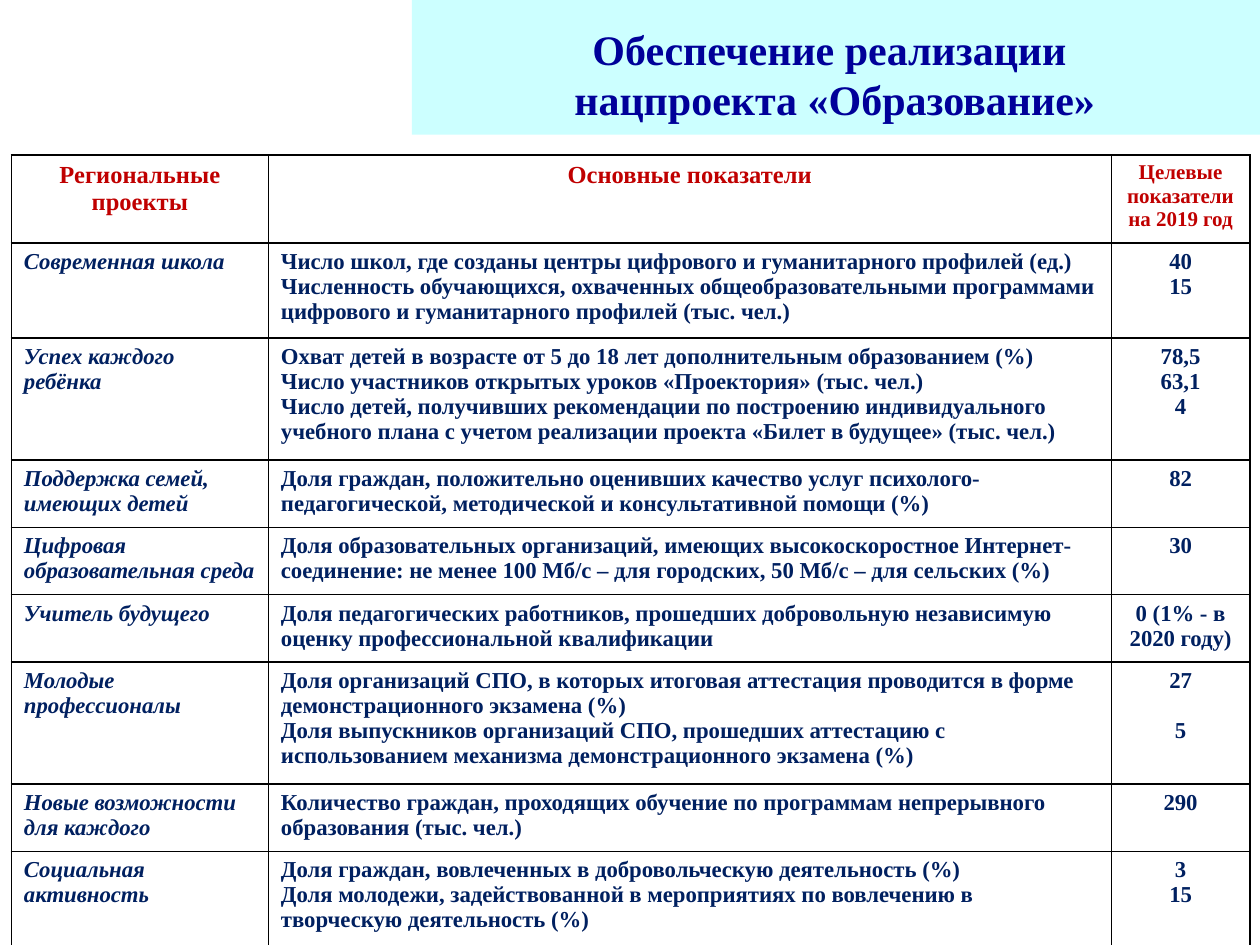
from dataclasses import dataclass

from pptx import Presentation
from pptx import util as u
from pptx.dml.color import RGBColor
from pptx.enum import shapes, text
from pptx.oxml.ns import qn
from lxml import etree


@dataclass(frozen=True)
class Theme:
    """Colours, font and type sizes of the slide."""
    font: str = "Times New Roman"
    band: str = "CCFFFF"
    title: str = "000099"
    header: str = "C00000"
    body: str = "002060"
    border: str = "000000"
    title_size: int = 24
    header_size: int = 14
    target_size: int = 12
    body_size: int = 13
    skipped_line: float = 14.5


THEME = Theme()
TITLE = ["Обеспечение реализации ", "нацпроекта «Образование»"]
HEADERS = ["Региональные проекты", "Основные показатели", "Целевые показатели на 2019 год"]
COLUMN_WIDTHS = [2.04, 6.69, 1.1]
HEADER_HEIGHT = 0.7
HEIGHT_BY_LINES = {2: 0.53, 3: 0.75, 4: 0.97}
PROJECTS = [
    (3, "Современная школа",
     ["Число школ, где созданы центры цифрового и гуманитарного профилей (ед.)",
      "Численность обучающихся, охваченных общеобразовательными программами "
      "цифрового и гуманитарного профилей (тыс. чел.)"],
     ["40", "15"]),
    (4, "Успех каждого ребёнка",
     ["Охват детей в возрасте от 5 до 18 лет дополнительным образованием (%)",
      "Число участников открытых уроков «Проектория» (тыс. чел.)",
      "Число детей, получивших рекомендации по построению индивидуального "
      "учебного плана с учетом реализации проекта «Билет в будущее» (тыс. чел.)"],
     ["78,5", "63,1", "4"]),
    (2, "Поддержка семей, имеющих детей",
     ["Доля граждан, положительно оценивших качество услуг "
      "психолого-педагогической, методической и консультативной помощи (%)"],
     ["82"]),
    (2, "Цифровая образовательная среда",
     ["Доля образовательных организаций, имеющих высокоскоростное "
      "Интернет-соединение: не менее 100 Мб/c – для городских, 50 Мб/c – для сельских (%)"],
     ["30"]),
    (2, "Учитель будущего",
     ["Доля педагогических работников, прошедших добровольную независимую "
      "оценку профессиональной квалификации"],
     ["0 (1% - в 2020 году)"]),
    (4, "Молодые профессионалы",
     ["Доля организаций СПО, в которых итоговая аттестация проводится в форме "
      "демонстрационного экзамена (%)",
      "Доля выпускников организаций СПО, прошедших аттестацию с "
      "использованием механизма демонстрационного экзамена (%)"],
     ["27", "5"]),
    (2, "Новые возможности для каждого",
     ["Количество граждан, проходящих обучение по программам непрерывного "
      "образования (тыс. чел.)"],
     ["290"]),
    (3, "Социальная активность",
     ["Доля граждан, вовлеченных в добровольческую деятельность (%)",
      "Доля молодежи, задействованной в мероприятиях по вовлечению в "
      "творческую деятельность (%)"],
     ["3", "15"]),
]
SPACED_PROJECT = "Молодые профессионалы"


def write_lines(frame, lines, size, color, centered=False, italic=False):
    """Fill a text frame with one bold paragraph per line."""
    frame.text = "\n".join(lines)
    for paragraph in frame.paragraphs:
        paragraph.alignment = text.PP_ALIGN.CENTER if centered else text.PP_ALIGN.LEFT
        for run in paragraph.runs:
            run.font.name = THEME.font
            run.font.size = u.Pt(size)
            run.font.bold = True
            run.font.italic = italic
            run.font.color.rgb = RGBColor.from_string(color)


def add_title(slide):
    """Draw the title band and its two lines of text."""
    band = slide.shapes.add_shape(shapes.MSO_SHAPE.RECTANGLE, u.Inches(3.27), 0,
                                  u.Inches(6.73), u.Inches(1.07))
    band.shadow.inherit = False
    band.fill.solid()
    band.fill.fore_color.rgb = RGBColor.from_string(THEME.band)
    band.line.fill.background()
    title = slide.shapes.add_textbox(u.Inches(3.25), 0, u.Inches(6.75), u.Inches(1.17))
    title.text_frame.word_wrap = True
    title.text_frame.vertical_anchor = text.MSO_ANCHOR.MIDDLE
    write_lines(title.text_frame, TITLE, THEME.title_size, THEME.title, centered=True)


def outline_cell(cell):
    """Clear the cell's fill and give it a thin border on every side."""
    cell.fill.background()
    properties = cell._tc.get_or_add_tcPr()
    for position, side in enumerate(("a:lnL", "a:lnR", "a:lnT", "a:lnB")):
        line = etree.Element(qn(side), w=str(u.Pt(1)))
        fill = etree.SubElement(line, qn("a:solidFill"))
        etree.SubElement(fill, qn("a:srgbClr"), val=THEME.border)
        properties.insert(position, line)


def add_projects_table(slide):
    """Build the table of regional projects, indicators and targets."""
    heights = [HEADER_HEIGHT] + [HEIGHT_BY_LINES[lines] for lines, *_ in PROJECTS]
    table = slide.shapes.add_table(
        len(heights), len(COLUMN_WIDTHS), u.Inches(0.09), u.Inches(1.23),
        u.Inches(sum(COLUMN_WIDTHS)), u.Inches(sum(heights))).table
    table.first_row = table.horz_banding = False
    for column, width in zip(table.columns, COLUMN_WIDTHS):
        column.width = u.Inches(width)
    for row, height in zip(table.rows, heights):
        row.height = u.Inches(height)
    for cell in table.iter_cells():
        outline_cell(cell)

    header_sizes = [THEME.header_size, THEME.header_size, THEME.target_size]
    for column, (header, size) in enumerate(zip(HEADERS, header_sizes)):
        write_lines(table.cell(0, column).text_frame, [header], size, THEME.header, centered=True)
    for row, (_, project, indicators, targets) in enumerate(PROJECTS, start=1):
        frames = [table.cell(row, column).text_frame for column in range(3)]
        write_lines(frames[0], [project], THEME.body_size, THEME.body, italic=True)
        write_lines(frames[1], indicators, THEME.body_size, THEME.body)
        write_lines(frames[2], targets, THEME.body_size, THEME.body, centered=True)
        if project == SPACED_PROJECT:
            frames[2].paragraphs[1].space_before = u.Pt(THEME.skipped_line)


def main():
    """Create the slide and save the presentation."""
    presentation = Presentation()
    presentation.slide_width = u.Inches(10)
    presentation.slide_height = u.Inches(7.5)
    slide = presentation.slides.add_slide(presentation.slide_layouts[6])
    add_title(slide)
    add_projects_table(slide)
    presentation.save("out.pptx")


if __name__ == "__main__":
    main()
